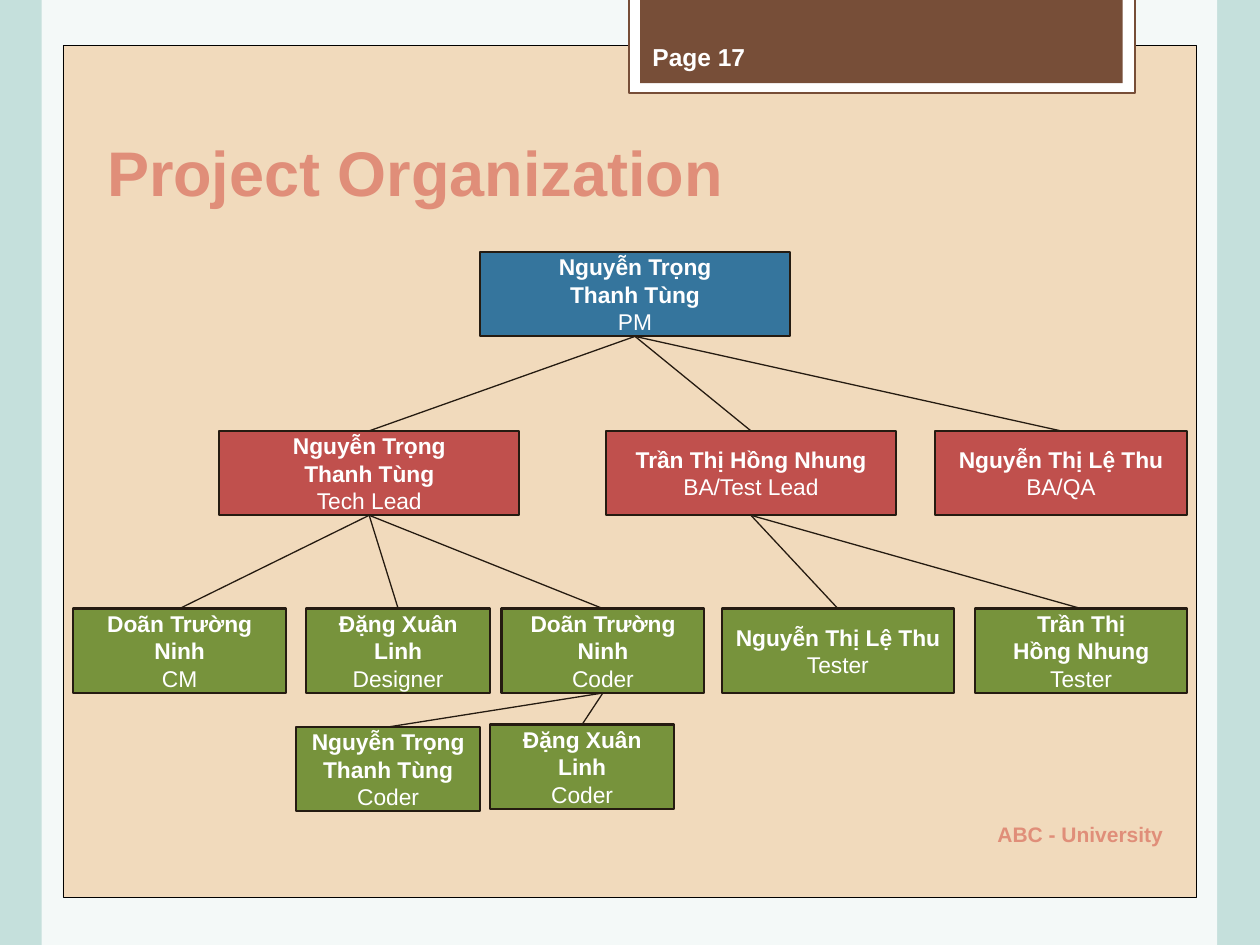
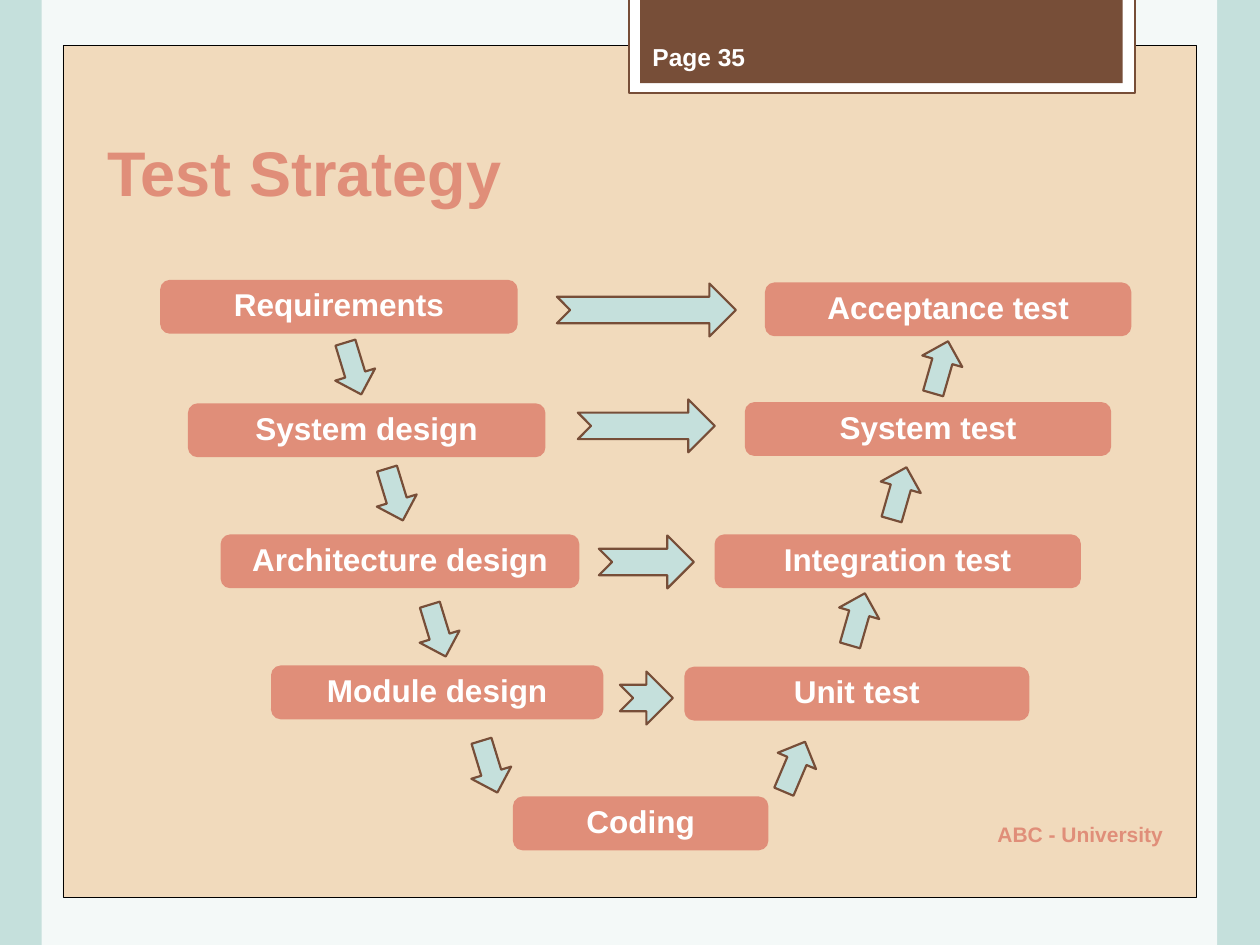
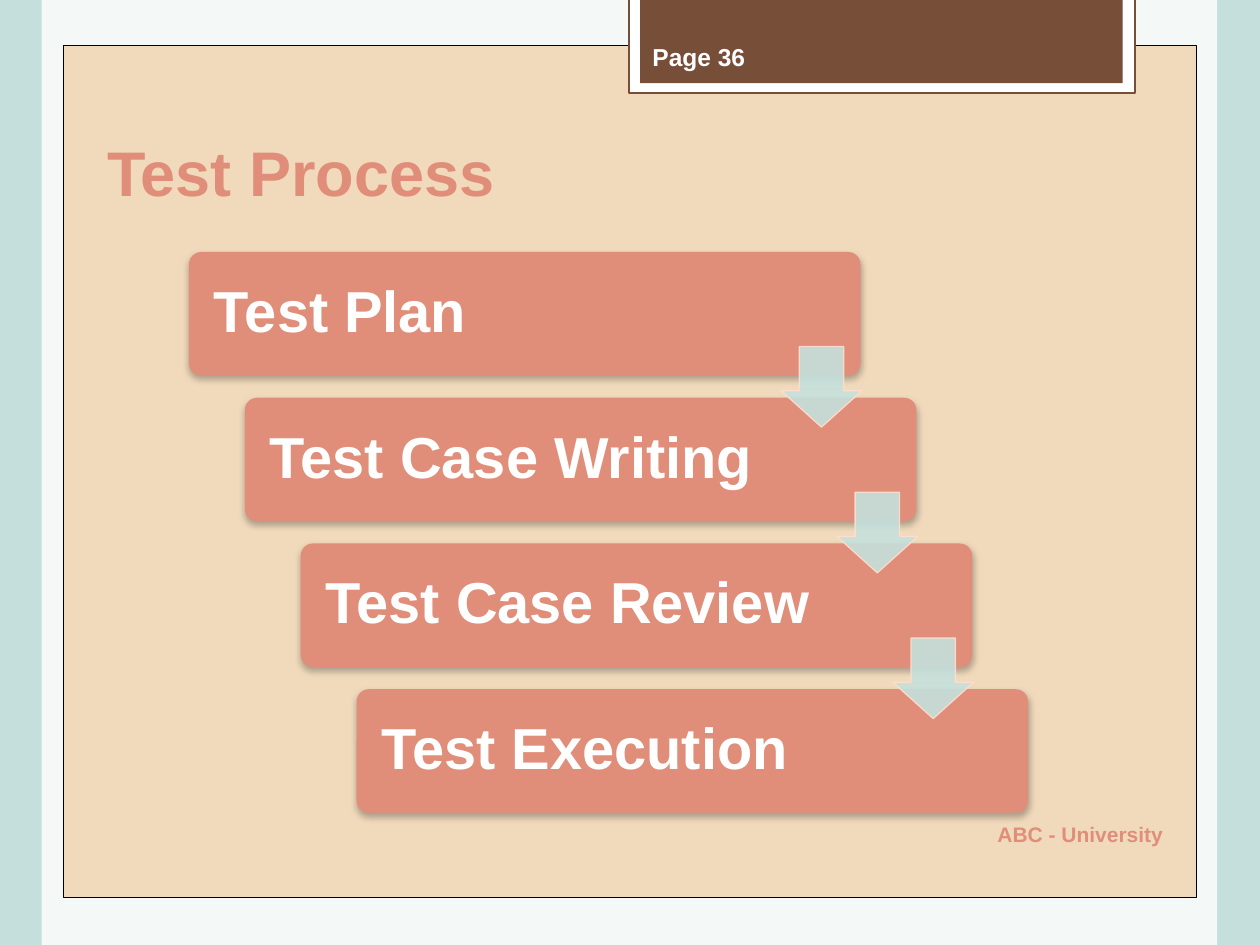
import dataclasses

import lxml.etree
import pptx
import pptx.dml.color
import pptx.enum.shapes
import pptx.enum.text
import pptx.oxml.ns
import pptx.util

SHAPE = pptx.enum.shapes.MSO_SHAPE
ALIGN = pptx.enum.text.PP_ALIGN
ANCHOR = pptx.enum.text.MSO_ANCHOR
TOP, BOTTOM = 0, 2


@dataclasses.dataclass(frozen=True)
class Theme:
    font: str = "Arial"
    mint: str = "C5E0DC"
    white: str = "FFFFFF"
    black: str = "000000"
    sand: str = "F1D4AF"
    brown: str = "774E38"
    coral: str = "E08E79"
    ink: str = "251B11"
    peach: str = "FFDFCD"
    blue: str = "35759D"
    red: str = "C0504D"
    green: str = "77933C"
    title_size: int = 36
    step_size: int = 33
    stage_size: int = 18
    page_size: int = 14
    person_size: int = 13
    footer_size: int = 12


def rgb(color):
    return pptx.dml.color.RGBColor.from_string(color)


def add_xml(parent, tag, **attributes):
    return lxml.etree.SubElement(parent, pptx.oxml.ns.qn(tag), attributes)


def set_alpha(fill_parent, percent):
    color = fill_parent.find(pptx.oxml.ns.qn("a:solidFill"))[0]
    add_xml(color, "a:alpha", val=str(percent * 1000))


class Deck:
    def __init__(self, theme):
        self.theme = theme
        self.prs = pptx.Presentation()
        self.prs.slide_width = pptx.util.Inches(10)
        self.prs.slide_height = pptx.util.Inches(7.5)
        self.layout = self.prs.slide_layouts.get_by_name("Title Only")
        self.slide = None
        fill = self.prs.slide_master.background.fill
        fill.solid()
        fill.fore_color.rgb = rgb(theme.mint)

    def new_slide(self, title, page):
        t = self.theme
        first = self.slide is None
        self.slide = self.prs.slides.add_slide(self.layout)
        if first:
            self.add_frame_to_layout()
        sp = self.slide.shapes.title
        self.place(sp, 0.75, 1, 8.67, 0.71)
        self.set_text(sp, [title], t.title_size, t.coral, ALIGN.LEFT, ANCHOR.BOTTOM)
        self.text((5.5, 6.42, 3.83, 0.4), "ABC - University", t.footer_size, t.coral, ALIGN.RIGHT)
        self.text((5.08, 0.25, 1.46, 0.4), f"Page {page}", t.page_size, t.white)

    def add_frame_to_layout(self):
        """Draw the panels and page tab, then move them to the shared layout."""
        t = self.theme
        frame = [
            self.shape(SHAPE.RECTANGLE, (0.33, 0, 9.33, 7.5), t.white, alpha=81),
            self.shape(SHAPE.RECTANGLE, (0.5, 0.36, 9, 6.76), t.sand, t.black, 0.5, alpha=81),
            self.shape(SHAPE.RECTANGLE, (4.99, -0.02, 4.02, 0.76), t.white, t.brown),
            self.shape(SHAPE.RECTANGLE, (5.08, -0.02, 3.83, 0.68), t.brown),
        ]
        for number, sp in enumerate(frame, start=101):
            sp.element.nvSpPr.cNvPr.set("id", str(number))
            self.layout.shapes.element.append(sp.element)

    def place(self, sp, *box):
        sp.left, sp.top, sp.width, sp.height = map(pptx.util.Inches, box)

    def shape(self, kind, box, fill, line=None, width=1.25, alpha=None, rotation=0):
        sp = self.slide.shapes.add_shape(kind, *map(pptx.util.Inches, box))
        sp.shadow.inherit = False
        sp.rotation = rotation
        sp.fill.solid()
        sp.fill.fore_color.rgb = rgb(fill)
        if alpha:
            set_alpha(sp.element.spPr, alpha)
        if line:
            sp.line.color.rgb = rgb(line)
            sp.line.width = pptx.util.Pt(width)
        else:
            sp.line.fill.background()
        return sp

    def set_text(self, sp, lines, size, color, align=ALIGN.CENTER, anchor=ANCHOR.MIDDLE,
                 spacing=None):
        """Fill sp with bold paragraphs."""
        tf = sp.text_frame
        tf.word_wrap = True
        tf.auto_size = pptx.enum.text.MSO_AUTO_SIZE.NONE
        tf.vertical_anchor = anchor
        tf.text = "\n".join(lines)
        for p in tf.paragraphs:
            p.alignment = align
            p.line_spacing = spacing
            for r in p.runs:
                r.font.name = self.theme.font
                r.font.size = pptx.util.Pt(size)
                r.font.bold = True
                r.font.color.rgb = rgb(color)

    def text(self, box, content, size, color, align=ALIGN.LEFT):
        sp = self.slide.shapes.add_textbox(*map(pptx.util.Inches, box))
        self.set_text(sp, [content], size, color, align)

    def person(self, left, top, width, fill, *lines):
        """Box with a name in bold and the role, the last line, in regular."""
        t = self.theme
        sp = self.shape(SHAPE.RECTANGLE, (left, top, width, 0.67), fill, t.ink)
        self.set_text(sp, lines, t.person_size, t.white)
        for r in sp.text_frame.paragraphs[-1].runs:
            r.font.bold = False
        return sp

    def link(self, boss, member):
        line = self.slide.shapes.add_connector(
            pptx.enum.shapes.MSO_CONNECTOR.STRAIGHT, 0, 0, 0, 0)
        line.begin_connect(boss, BOTTOM)
        line.end_connect(member, TOP)
        line.line.color.rgb = rgb(self.theme.ink)
        line.line.width = pptx.util.Pt(0.75)
        add_xml(line.element.spPr, "a:effectLst")

    def stage(self, left, top, width, label):
        t = self.theme
        sp = self.shape(SHAPE.ROUNDED_RECTANGLE, (left, top, width, 0.41), t.coral, t.coral)
        self.set_text(sp, [label], t.stage_size, t.white, spacing=0.9)

    def arrow(self, kind, left, top, width, height, rotation=0):
        t = self.theme
        self.shape(kind, (left, top, width, height), t.mint, t.brown, rotation=rotation)

    def step(self, left, top, label):
        t = self.theme
        sp = self.shape(SHAPE.ROUNDED_RECTANGLE, (left, top, 5.33, 0.98), t.coral)
        sp.adjustments[0] = 0.1
        self.set_text(sp, [label], t.step_size, t.white, ALIGN.LEFT, spacing=0.9)
        sp.text_frame.margin_left = pptx.util.Inches(0.17)
        effects = sp.element.spPr.find(pptx.oxml.ns.qn("a:effectLst"))
        shadow = add_xml(effects, "a:outerShdw", blurRad=str(pptx.util.Pt(4)),
                         dist=str(pptx.util.Pt(2)), dir="5400000", rotWithShape="0")
        color = add_xml(shadow, "a:srgbClr", val=t.black)
        add_xml(color, "a:alpha", val="28000")

    def step_arrow(self, left, top):
        t = self.theme
        sp = self.shape(SHAPE.DOWN_ARROW, (left, top, 0.64, 0.64), t.mint, t.peach, 0.75, alpha=90)
        sp.adjustments[0], sp.adjustments[1] = 0.55, 0.45
        set_alpha(sp.element.spPr.find(pptx.oxml.ns.qn("a:ln")), 90)


def organization_slide(deck):
    t = deck.theme
    deck.new_slide("Project Organization", 17)
    leads, team = 3.42, 4.83
    people = {
        "pm": (3.81, 2, 2.46, t.blue, "Nguyễn Trọng", "Thanh Tùng", "PM"),
        "tech": (1.74, leads, 2.38, t.red, "Nguyễn Trọng", "Thanh Tùng", "Tech Lead"),
        "test": (4.81, leads, 2.3, t.red, "Trần Thị Hồng Nhung", "BA/Test Lead"),
        "qa": (7.42, leads, 2, t.red, "Nguyễn Thị Lệ Thu", "BA/QA"),
        "cm": (0.58, team, 1.69, t.green, "Doãn Trường Ninh", "CM"),
        "designer": (2.43, team, 1.46, t.green, "Đặng Xuân Linh", "Designer"),
        "coder": (3.98, team, 1.61, t.green, "Doãn Trường Ninh", "Coder"),
        "tester 1": (5.73, team, 1.84, t.green, "Nguyễn Thị Lệ Thu", "Tester"),
        "tester 2": (7.74, team, 1.68, t.green, "Trần Thị", "Hồng Nhung", "Tester"),
        "coder 1": (2.35, 5.77, 1.46, t.green, "Nguyễn Trọng\vThanh Tùng", "Coder"),
        "coder 2": (3.89, 5.75, 1.46, t.green, "Đặng Xuân Linh", "Coder"),
    }
    reports = {
        "pm": ["tech", "test", "qa"],
        "tech": ["cm", "designer", "coder"],
        "test": ["tester 1", "tester 2"],
        "coder": ["coder 1", "coder 2"],
    }
    boxes = {key: deck.person(*person) for key, person in people.items()}
    for boss, members in reports.items():
        for member in members:
            deck.link(boxes[boss], boxes[member])


def strategy_slide(deck):
    deck.new_slide("Test Strategy", 35)
    stages = [
        (1.28, 2.23, 2.82, "Requirements"),
        (1.5, 3.21, 2.82, "System design"),
        (1.76, 4.25, 2.83, "Architecture design"),
        (2.16, 5.29, 2.62, "Module design"),
        (4.08, 6.33, 2.01, "Coding"),
        (5.44, 5.3, 2.72, "Unit test"),
        (5.68, 4.25, 2.89, "Integration test"),
        (5.92, 3.2, 2.89, "System test"),
        (6.08, 2.25, 2.89, "Acceptance test"),
    ]
    for stage in stages:
        deck.stage(*stage)

    design_arrows = [(2.64, 2.71, 343), (2.97, 3.71, 343), (3.31, 4.79, 343), (3.72, 5.87, 343)]
    test_arrows = [(7.3, 2.7, 196), (6.97, 3.7, 196), (6.64, 4.7, 196), (6.14, 5.87, 203)]
    for left, top, rotation in design_arrows + test_arrows:
        deck.arrow(SHAPE.DOWN_ARROW, left, top, 0.33, 0.43, rotation)

    for i, top in enumerate([2.25, 3.17, 4.25, 5.33]):
        width = 1.42 - i / 3
        deck.arrow(SHAPE.NOTCHED_RIGHT_ARROW, 5.13 - width / 2, top, width, 0.42)


def process_slide(deck):
    deck.new_slide("Test Process", 36)
    labels = ["Test Plan", "Test Case Writing", "Test Case Review", "Test Execution"]
    corners = [(1.5 + 1.33 * i / 3, 2 + 3.47 * i / 3) for i in range(len(labels))]
    for (left, top), label in zip(corners, labels):
        deck.step(left, top, label)
    for left, top in corners[:-1]:
        deck.step_arrow(left + 4.7, top + 0.75)


def main():
    deck = Deck(Theme())
    organization_slide(deck)
    strategy_slide(deck)
    process_slide(deck)
    deck.prs.save("out.pptx")


if __name__ == "__main__":
    main()
